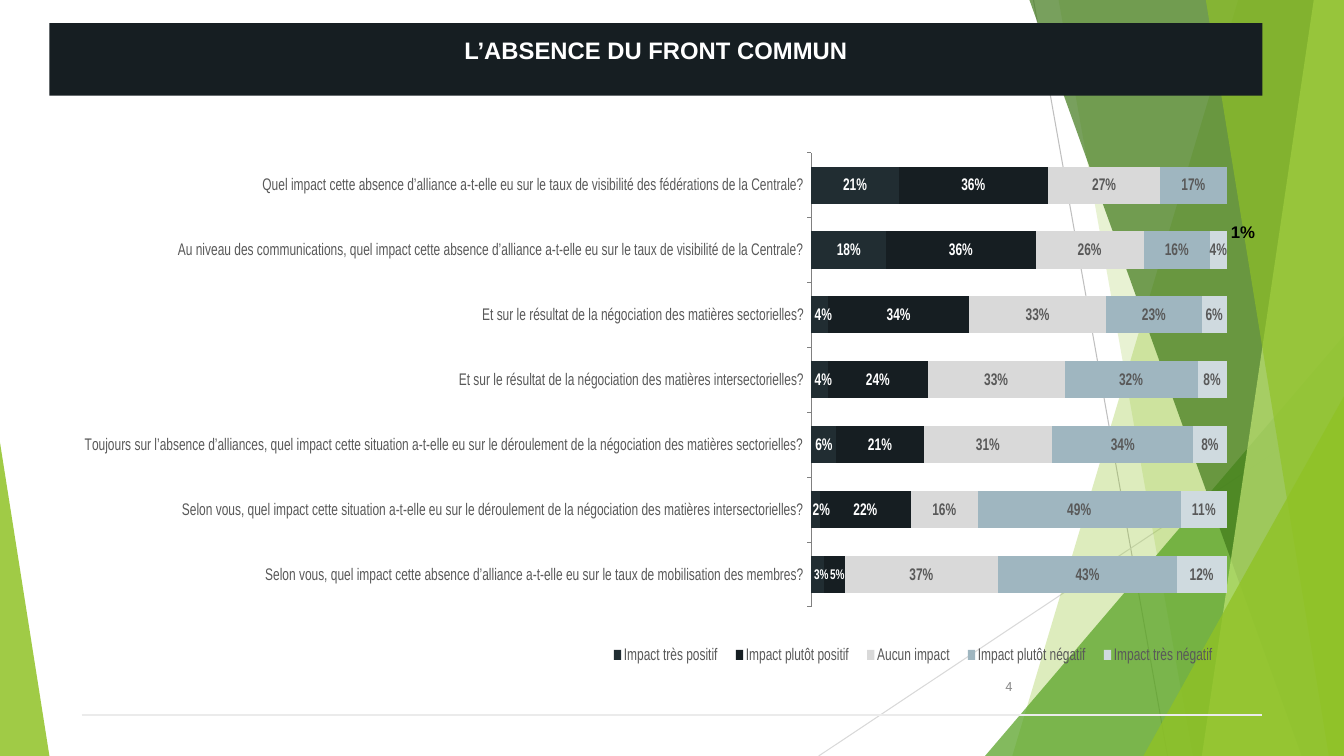
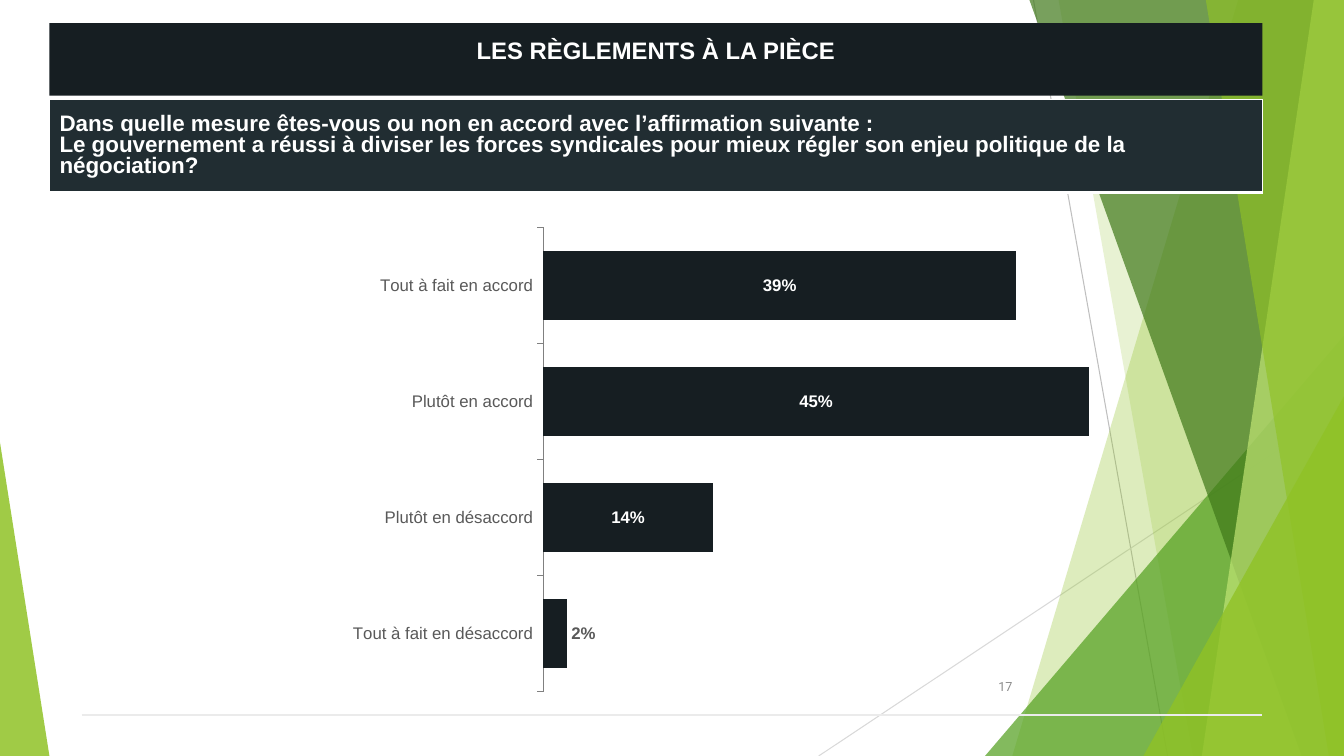
from lxml import etree
from pptx import Presentation
from pptx.chart.data import CategoryChartData
from pptx.dml.color import RGBColor
from pptx.enum.chart import XL_CHART_TYPE as ChartType
from pptx.enum.chart import XL_LABEL_POSITION as LabelPosition
from pptx.enum.chart import XL_LEGEND_POSITION as LegendPosition
from pptx.enum.chart import XL_TICK_LABEL_POSITION as TickLabelPosition
from pptx.enum.chart import XL_TICK_MARK as TickMark
from pptx.enum.shapes import MSO_CONNECTOR, MSO_SHAPE
from pptx.enum.text import MSO_ANCHOR, PP_ALIGN
from pptx.oxml import parse_xml
from pptx.oxml.ns import nsdecls, qn
from pptx.util import Inches, Pt

WHITE = RGBColor(0xFF, 0xFF, 0xFF)
BLACK = RGBColor(0x00, 0x00, 0x00)
NIGHT = RGBColor(0x16, 0x1E, 0x22)
SLATE = RGBColor(0x21, 0x2D, 0x32)
STEEL = RGBColor(0x9F, 0xB6, 0xC0)
MIST = RGBColor(0xCF, 0xDA, 0xDF)
TEXT_GREY = RGBColor(0x59, 0x59, 0x59)
NUMBER_GREY = RGBColor(0x8C, 0x8C, 0x8C)
AXIS_GREY = RGBColor(0x80, 0x80, 0x80)
LINE_GREY = RGBColor(0xBF, 0xBF, 0xBF)
PALE_GREY = RGBColor(0xD9, 0xD9, 0xD9)
RULE_GREY = RGBColor(0xEB, 0xEB, 0xEB)
LIME = RGBColor(0x90, 0xC2, 0x26)
GREEN = RGBColor(0x54, 0xA0, 0x21)
FOREST = RGBColor(0x3F, 0x78, 0x19)
LIGHT_LIME = RGBColor(0xC0, 0xE4, 0x74)

WIDTH, HEIGHT = 13.33, 7.5
BAND_LEFT, BAND_WIDTH = 0.49, 12.03

# from x, from y, to x, to y, colour, points
BACK_LINES = [
    (10.25, 0, 11.58, HEIGHT, LINE_GREY, 0.75),
    (WIDTH, 4.03, 8.12, HEIGHT, PALE_GREY, 0.75),
]
FOOTER_LINE = (0.81, 7.09, 12.52, 7.09, RULE_GREY, 1.5)

# Panels run to the right edge: top x, bottom x.
# Triangles stand on the bottom edge: left, top, width, apex.
FACETS = [
    ("panel", (12.28, 10.04), LIME, 30),
    ("panel", (10.5, 11.83), LIME, 20),
    ("triangle", (9.77, 3.33, 3.56, 1), GREEN, 72),
    ("panel", (10.21, 12.91), FOREST, 70),
    ("panel", (13.03, 11.92), LIGHT_LIME, 70),
    ("panel", (11.96, 13.18), LIME, 65),
    ("triangle", (11.34, 3.93, 1.99, 1), LIME, 80),
    ("triangle", (0, 4.39, 0.49, 0), LIME, 85),
]

SLIDES = [
    {
        "title": "L’ABSENCE DU FRONT COMMUN",
        "number": "4",
        "type": ChartType.BAR_STACKED,
        "place": (0.84, 1.41, 11.33, 5.3),
        "plot": (0.49, 0.02, 0.51, 0.85),
        "legend": (0.23, 0.93, 0.77, 0.06),
        "maximum": 1,
        "gap": 75,
        "overlap": 100,
        "categories": [
            "Quel impact cette absence d’alliance a-t-elle eu sur le taux de visibilité des fédérations de la Centrale?",
            "Au niveau des communications, quel impact cette absence d’alliance a-t-elle eu sur le taux de visibilité de la Centrale?",
            "Et sur le résultat de la négociation des matières sectorielles?",
            "Et sur le résultat de la négociation des matières intersectorielles?",
            "Toujours sur l’absence d’alliances, quel impact cette situation a-t-elle eu sur le déroulement de la négociation des matières sectorielles?",
            "Selon vous, quel impact cette situation a-t-elle eu sur le déroulement de la négociation des matières intersectorielles?",
            "Selon vous, quel impact cette absence d’alliance a-t-elle eu sur le taux de mobilisation des membres?",
        ],
        "series": [
            ("Impact très positif", (0.21, 0.18, 0.04, 0.04, 0.06, 0.02, 0.03), SLATE, WHITE),
            ("Impact plutôt positif", (0.36, 0.36, 0.34, 0.24, 0.21, 0.22, 0.05), NIGHT, WHITE),
            ("Aucun impact", (0.27, 0.26, 0.33, 0.33, 0.31, 0.16, 0.37), PALE_GREY, TEXT_GREY),
            ("Impact plutôt négatif", (0.17, 0.16, 0.23, 0.32, 0.34, 0.49, 0.43), STEEL, TEXT_GREY),
            ("Impact très négatif", (0.01, 0.04, 0.06, 0.08, 0.08, 0.11, 0.12), MIST, TEXT_GREY),
        ],
        # Labels of narrow bars: series, point, shift to the right, size
        "narrow": [
            (0, 2, 0.05, 12),
            (0, 3, 0.05, 12),
            (0, 5, 0.08, 12),
            (0, 6, 0.05, 10),
            (1, 6, 0.04, 10),
        ],
    },
    {
        "title": "LES RÈGLEMENTS À LA PIÈCE",
        "number": "17",
        "type": ChartType.BAR_CLUSTERED,
        "place": (0.28, 1.79, 11.35, 5.83),
        "plot": (0.45, 0.08, 0.53, 0.79),
        "legend": None,
        "maximum": 0.5,
        "gap": 70,
        "overlap": 0,
        "categories": [
            "Tout à fait en accord",
            "Plutôt en accord",
            "Plutôt en désaccord",
            "Tout à fait en désaccord",
        ],
        "series": [("Series 1", (0.39, 0.45, 0.14, 0.02), NIGHT, WHITE)],
        "narrow": [],
    },
]
EDGE_MODE = '<c:xMode val="edge"/><c:yMode val="edge"/>'


def format_font(font, color, **values):
    font.color.rgb = color
    for name, value in ({"name": "Arial"} | values).items():
        setattr(font, name, value)


def set_layout(parent, index, place, mode=EDGE_MODE):
    """Place a chart part at fractions of the chart: x, y, width, height."""
    for layout in parent.findall(qn("c:layout")):
        parent.remove(layout)
    sizes = "".join(f'<c:{tag} val="{value}"/>' for tag, value in zip("xywh", place))
    parent.insert(index, parse_xml(
        f'<c:layout {nsdecls("c")}><c:manualLayout>{mode}{sizes}'
        "</c:manualLayout></c:layout>"))


presentation = Presentation()
presentation.slide_width = Inches(WIDTH)
presentation.slide_height = Inches(HEIGHT)
slides = []

for content in SLIDES:
    slide = presentation.slides.add_slide(presentation.slide_layouts[6])
    slides.append(slide)
    shapes = slide.shapes

    # Green facets, with two lines behind them and the footer line in front
    for item in [*BACK_LINES, *FACETS, FOOTER_LINE]:
        if item in FACETS:
            kind, geometry, color, opacity = item
            if kind == "panel":
                top_x, bottom_x = geometry
                builder = shapes.build_freeform(Inches(top_x), 0)
                builder.add_line_segments([
                    (Inches(WIDTH), 0),
                    (Inches(WIDTH), Inches(HEIGHT)),
                    (Inches(bottom_x), Inches(HEIGHT)),
                ])
                facet = builder.convert_to_shape()
            else:
                left, top, width, apex = geometry
                facet = shapes.add_shape(
                    MSO_SHAPE.ISOSCELES_TRIANGLE, Inches(left), Inches(top),
                    Inches(width), Inches(HEIGHT - top))
                facet.adjustments[0] = apex
            facet.shadow.inherit = False
            facet.line.fill.background()
            facet.fill.solid()
            facet.fill.fore_color.rgb = color
            color_element = facet.fill._xPr.find(qn("a:solidFill"))[0]
            etree.SubElement(color_element, qn("a:alpha"), val=str(opacity * 1000))
        else:
            *ends, color, points = item
            line = shapes.add_connector(MSO_CONNECTOR.STRAIGHT, *map(Inches, ends))
            line.line.color.rgb = color
            line.line.width = Pt(points)
            etree.SubElement(line._element.spPr, qn("a:effectLst"))

    number_box = shapes.add_textbox(Inches(9.39), Inches(6.61), Inches(0.75), Inches(0.4))
    number_box.text_frame.word_wrap = True
    number_box.text_frame.vertical_anchor = MSO_ANCHOR.MIDDLE
    paragraph = number_box.text_frame.paragraphs[0]
    paragraph.text = content["number"]
    paragraph.alignment = PP_ALIGN.RIGHT
    format_font(paragraph.font, NUMBER_GREY, size=Pt(9), name="Roboto")

    title = shapes.add_shape(
        MSO_SHAPE.RECTANGLE, Inches(BAND_LEFT), Inches(0.23), Inches(BAND_WIDTH), Inches(0.72))
    title.shadow.inherit = False
    title.fill.solid()
    title.fill.fore_color.rgb = NIGHT
    title.line.fill.background()
    frame = title.text_frame
    for name, value in {
        "margin_left": 0, "margin_top": 0, "margin_right": 0,
        "margin_bottom": Inches(0.18), "vertical_anchor": MSO_ANCHOR.MIDDLE,
    }.items():
        setattr(frame, name, value)
    paragraph = frame.paragraphs[0]
    paragraph.text = content["title"]
    paragraph.alignment = PP_ALIGN.CENTER
    format_font(paragraph.font, WHITE, size=Pt(17), bold=True)

    # Chart
    data = CategoryChartData(number_format="0%")
    data.categories = content["categories"]
    for name, values, *_ in content["series"]:
        data.add_series(name, values)
    chart = shapes.add_chart(content["type"], *map(Inches, content["place"]), data).chart
    format_font(chart.font, BLACK, size=Pt(18), name="Roboto")
    chart.has_title = False
    set_layout(chart._chartSpace.chart.plotArea, 0, content["plot"],
               '<c:layoutTarget val="inner"/>' + EDGE_MODE)

    chart.has_legend = content["legend"] is not None
    if chart.has_legend:
        chart.legend.position = LegendPosition.BOTTOM
        chart.legend.include_in_layout = False
        format_font(chart.legend.font, TEXT_GREY, size=Pt(12))
        set_layout(chart.legend._element, 1, content["legend"])

    category_axis = chart.category_axis
    category_axis.reverse_order = True
    category_axis.has_major_gridlines = False
    category_axis.major_tick_mark = TickMark.OUTSIDE
    category_axis.tick_label_position = TickLabelPosition.LOW
    category_axis.format.line.color.rgb = AXIS_GREY
    format_font(category_axis.tick_labels.font, TEXT_GREY, size=Pt(12))

    value_axis = chart.value_axis
    value_axis.visible = False
    value_axis.has_major_gridlines = False
    value_axis.minimum_scale = 0
    value_axis.maximum_scale = content["maximum"]

    plot = chart.plots[0]
    plot.gap_width = content["gap"]
    plot.overlap = content["overlap"]
    plot.vary_by_categories = False
    for series, (*_, fill_color, label_color) in zip(plot.series, content["series"]):
        series.format.fill.solid()
        series.format.fill.fore_color.rgb = fill_color
        labels = series.data_labels
        labels.show_value = True
        labels.number_format = "0%"
        labels.number_format_is_linked = False
        labels.position = LabelPosition.CENTER
        format_font(labels.font, label_color, size=Pt(12), bold=True)

    for series_index, point_index, shift, size in content["narrow"]:
        label = plot.series[series_index].points[point_index].data_label
        format_font(label.font, WHITE, size=Pt(size), bold=True)
        label.position = LabelPosition.CENTER
        chart_width = content["place"][2]
        set_layout(label._get_or_add_dLbl(), 1, (shift / chart_width, 0), mode="")

front_slide, settlement_slide = slides

# The label beside the second bar
side_label = front_slide.shapes.add_textbox(
    Inches(12.11), Inches(2.15), Inches(0.44), Inches(0.3))
side_label.text_frame.word_wrap = False
paragraph = side_label.text_frame.paragraphs[0]
paragraph.text = "1%"
format_font(paragraph.font, BLACK, size=Pt(12), bold=True)

# The shortest bar carries its label outside
short_label = plot.series[0].points[3].data_label
format_font(short_label.font, TEXT_GREY, size=Pt(12), bold=True)
short_label.position = LabelPosition.OUTSIDE_END

# The question band
table = settlement_slide.shapes.add_table(
    1, 1, Inches(BAND_LEFT), Inches(0.99), Inches(BAND_WIDTH), Inches(0.92)).table
cell = table.cell(0, 0)
cell.vertical_anchor = MSO_ANCHOR.MIDDLE
paragraph = cell.text_frame.paragraphs[0]
paragraph.line_spacing = 0.85
paragraph.text = (
    "Dans quelle mesure êtes-vous ou non en accord avec l’affirmation suivante :\v"
    "Le gouvernement a réussi à diviser les forces syndicales pour mieux régler "
    "son enjeu politique de la négociation?")
for run in paragraph.runs:
    format_font(run.font, WHITE, size=Pt(16), bold=True)
cell_properties = cell._tc.get_or_add_tcPr()
for side, points in {"R": 1, "T": 1, "B": 3}.items():
    cell_properties.append(parse_xml(
        f'<a:ln{side} {nsdecls("a")} w="{Pt(points)}"><a:solidFill>'
        f'<a:srgbClr val="{WHITE}"/></a:solidFill></a:ln{side}>'))
cell.fill.solid()
cell.fill.fore_color.rgb = SLATE

presentation.save("out.pptx")
